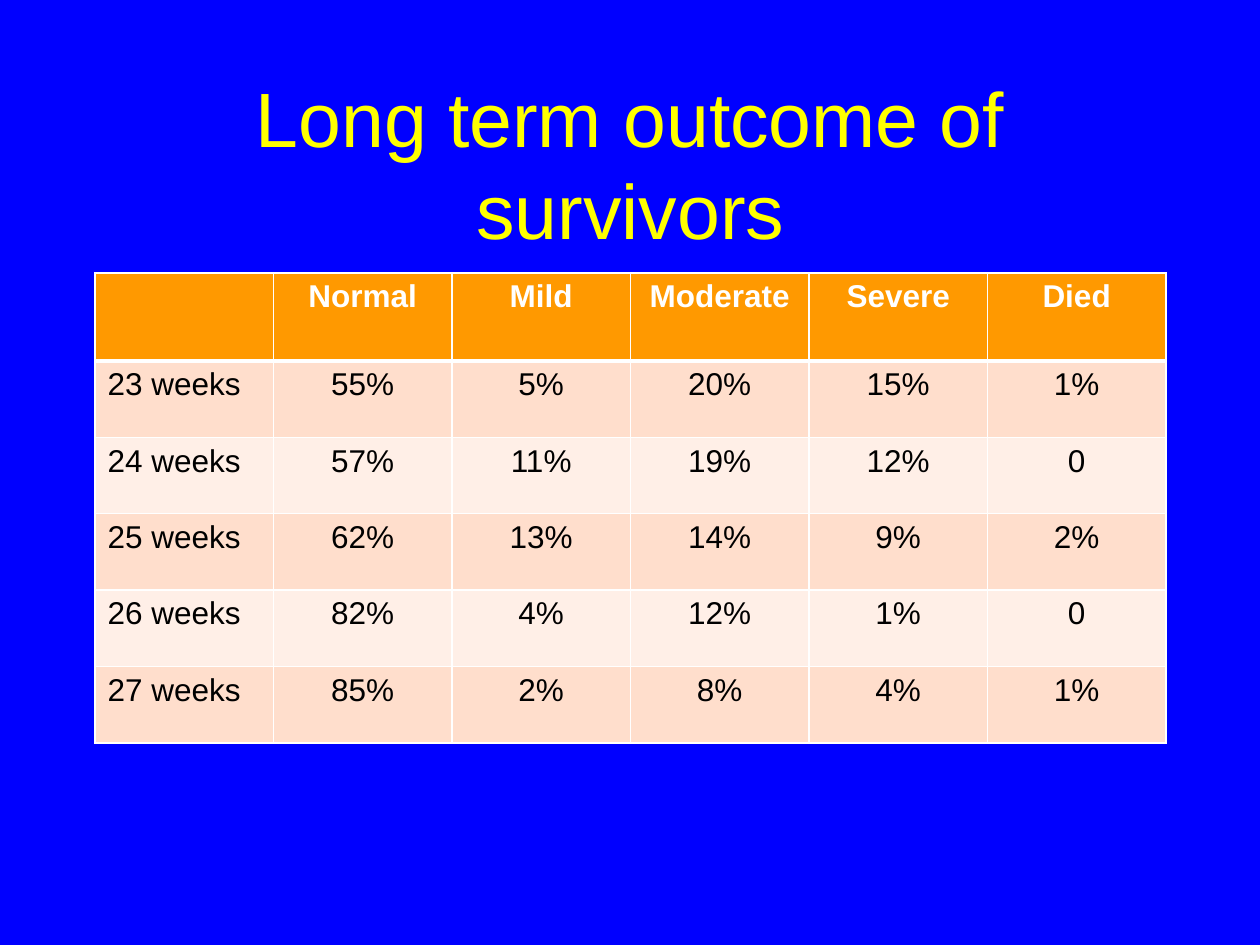
from lxml import etree
from pptx import Presentation
from pptx import util as u
from pptx.dml.color import RGBColor
from pptx.enum import text
from pptx.oxml.ns import qn

# Content
TITLE = "Long term outcome of survivors"
HEADINGS = ["", "Normal", "Mild", "Moderate", "Severe", "Died"]
OUTCOMES = [
    ["23 weeks", "55%", "5%", "20%", "15%", "1%"],
    ["24 weeks", "57%", "11%", "19%", "12%", "0"],
    ["25 weeks", "62%", "13%", "14%", "9%", "2%"],
    ["26 weeks", "82%", "4%", "12%", "1%", "0"],
    ["27 weeks", "85%", "2%", "8%", "4%", "1%"],
]
COLORS = {
    "background": "0000FF", "title": "FFFF00", "header": "FF9900",
    "odd": "FFDECC", "even": "FFEFE7", "body": "000000", "white": "FFFFFF",
}
FONT = "Arial"

# Layout in px, 126 to the inch
SCALE = 914400 / 126
PAGE_SIZE = (1260, 945)
TITLE_BOX = (95, 84, 1071, 158)
TABLE_BOX = (95, 273, 1071, 470)
HEADER_HEIGHT = 88


def px(length):
    return u.Emu(round(length * SCALE))


def color(name):
    return RGBColor.from_string(COLORS[name])


def style(para, size, color_name, align, bold=False):
    para.alignment = align
    para.font.name = FONT
    para.font.size = u.Pt(size)
    para.font.bold = bold
    para.font.color.rgb = color(color_name)


def add_borders(cell, bottom_width):
    properties = cell._tc.get_or_add_tcPr()
    widths = {"a:lnL": 1, "a:lnR": 1, "a:lnT": 1, "a:lnB": bottom_width}
    for position, (tag, width) in enumerate(widths.items()):
        line = etree.Element(qn(tag), w=str(u.Pt(width)))
        fill = etree.SubElement(line, qn("a:solidFill"))
        etree.SubElement(fill, qn("a:srgbClr"), val=COLORS["white"])
        properties.insert(position, line)


deck = Presentation()
deck.slide_width, deck.slide_height = map(px, PAGE_SIZE)
page = deck.slides.add_slide(deck.slide_layouts[6])
page.background.fill.solid()
page.background.fill.fore_color.rgb = color("background")

# Title
frame = page.shapes.add_textbox(*map(px, TITLE_BOX)).text_frame
frame.word_wrap = True
frame.vertical_anchor = text.MSO_ANCHOR.MIDDLE
frame.text = TITLE
style(frame.paragraphs[0], 44, "title", text.PP_ALIGN.CENTER)

# Table: equal columns, a taller header, equal body rows
rows = [HEADINGS] + OUTCOMES
table = page.shapes.add_table(len(rows), len(HEADINGS), *map(px, TABLE_BOX)).table
for column in table.columns:
    column.width = px(TABLE_BOX[2] / len(HEADINGS))
for r, values in enumerate(rows):
    header = r == 0
    body_height = (TABLE_BOX[3] - HEADER_HEIGHT) / len(OUTCOMES)
    table.rows[r].height = px(HEADER_HEIGHT if header else body_height)
    fill_name = "header" if header else "odd" if r % 2 else "even"
    for c, value in enumerate(values):
        cell = table.cell(r, c)
        cell.text = value
        cell.fill.solid()
        cell.fill.fore_color.rgb = color(fill_name)
        add_borders(cell, 3 if header else 1)
        align = text.PP_ALIGN.CENTER if c else text.PP_ALIGN.LEFT
        style(cell.text_frame.paragraphs[0], 18,
              "white" if header else "body", align, header)
    # The heavy rule under the header is also the top edge of the first body row
    if r == 1:
        for cell in table.rows[r].cells:
            cell._tc.tcPr.find(qn("a:lnT")).set("w", str(u.Pt(3)))

deck.save("out.pptx")
